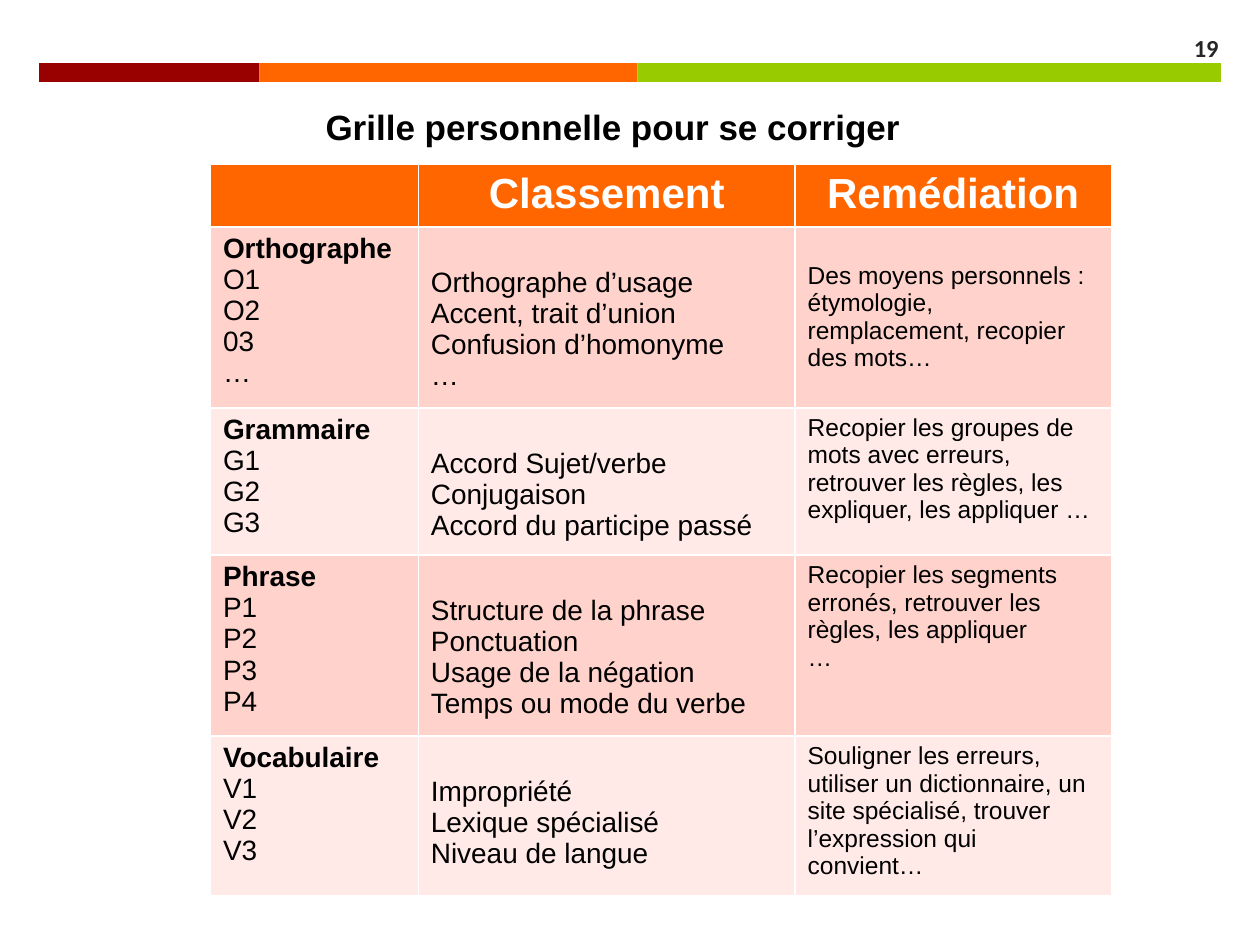
"""Build the slide with a personal grid for correcting one's own writing."""
from pptx import Presentation
from pptx.dml.color import RGBColor
from pptx.enum.shapes import MSO_SHAPE as Shape
from pptx.enum.text import MSO_ANCHOR as Anchor, PP_ALIGN as Align
from pptx.util import Inches, Pt

DARK_RED = RGBColor(0x99, 0x00, 0x00)
ORANGE = RGBColor(0xFF, 0x66, 0x00)
GREEN = RGBColor(0x99, 0xCC, 0x00)
PINK = RGBColor(0xFF, 0xD3, 0xCC)
PALE_PINK = RGBColor(0xFF, 0xEA, 0xE7)
WHITE = RGBColor(0xFF, 0xFF, 0xFF)
BLACK = RGBColor(0x00, 0x00, 0x00)
GREY = RGBColor(0x26, 0x26, 0x26)

BANDS = [(1.75, DARK_RED), (3, ORANGE), (4.63, GREEN)]
HEADERS = ["", "Classement", "Remédiation"]
COLUMN_WIDTHS = [1.65, 2.99, 2.51]
ROW_HEIGHTS = [0.49, 1.43, 1.17, 1.43, 1.26]
TOP_MARGIN = 0.05
CLASS_TOP = 0.32
GRID = [
    (["Orthographe", "O1", "O2", "03", "…"],
     ["Orthographe d’usage", "Accent, trait d’union", "Confusion d’homonyme", "…"],
     ["Des moyens personnels : étymologie, remplacement, recopier des mots…"], 0.28),
    (["Grammaire", "G1", "G2", "G3"],
     ["Accord Sujet/verbe", "Conjugaison", "Accord du participe passé"],
     ["Recopier les groupes de mots avec erreurs, retrouver les règles, "
      "les expliquer, les appliquer …"], TOP_MARGIN),
    (["Phrase", "P1", "P2", "P3", "P4"],
     ["Structure de la phrase", "Ponctuation", "Usage de la négation",
      "Temps ou mode du verbe"],
     ["Recopier les segments erronés, retrouver les règles, les appliquer", "…"],
     TOP_MARGIN),
    (["Vocabulaire", "V1", "V2", "V3"],
     ["Impropriété", "Lexique spécialisé", "Niveau de langue"],
     ["Souligner les erreurs, utiliser un dictionnaire, un site spécialisé, "
      "trouver l’expression qui convient…"], TOP_MARGIN),
]


def write(tf, lines, size, color=BLACK, bold=False, align=Align.LEFT, font="Arial"):
    """Fill a text frame with one paragraph per line."""
    tf.word_wrap = True
    for i, line in enumerate(lines):
        p = tf.add_paragraph() if i else tf.paragraphs[0]
        p.text = line
        p.alignment = align
        p.font.name = font
        p.font.size = Pt(size)
        p.font.bold = bold
        p.font.color.rgb = color


def add_bands(s):
    """Draw the coloured bands end to end across the top."""
    left = 0.31
    for width, color in BANDS:
        sp = s.shapes.add_shape(Shape.RECTANGLE, Inches(left), Inches(0.5),
                                Inches(width), Inches(0.15))
        sp.shadow.inherit = False
        sp.fill.solid()
        sp.fill.fore_color.rgb = color
        sp.line.fill.background()
        left += width


def add_text(s, left, top, width, height, text, size, anchor=Anchor.TOP, **style):
    """Add a bold one-line text box."""
    tf = s.shapes.add_textbox(Inches(left), Inches(top),
                              Inches(width), Inches(height)).text_frame
    tf.vertical_anchor = anchor
    write(tf, [text], size, bold=True, **style)


def fill_cell(cell, lines, size, fill, top=TOP_MARGIN, **style):
    """Set the fill, top margin and text of a table cell."""
    cell.fill.solid()
    cell.fill.fore_color.rgb = fill
    cell.margin_top = Inches(top)
    write(cell.text_frame, lines, size, **style)


def add_grid(s):
    """Add the correction table."""
    table = s.shapes.add_table(len(ROW_HEIGHTS), len(COLUMN_WIDTHS), Inches(1.67), Inches(1.3),
                               Inches(sum(COLUMN_WIDTHS)), Inches(sum(ROW_HEIGHTS))).table
    for column, width in zip(table.columns, COLUMN_WIDTHS):
        column.width = Inches(width)
    for row, height in zip(table.rows, ROW_HEIGHTS):
        row.height = Inches(height)
    for col, header in enumerate(HEADERS):
        fill_cell(table.cell(0, col), [header], 24, ORANGE,
                  color=WHITE, bold=True, align=Align.CENTER)
    for row, (codes, classes, remedies, remedy_top) in enumerate(GRID, 1):
        fill = PINK if row % 2 else PALE_PINK
        fill_cell(table.cell(row, 0), codes, 16, fill)
        table.cell(row, 0).text_frame.paragraphs[0].runs[0].font.bold = True
        fill_cell(table.cell(row, 1), classes, 16, fill, CLASS_TOP)
        fill_cell(table.cell(row, 2), remedies, 14, fill, remedy_top)


def main():
    """Create the presentation and save it."""
    prs = Presentation()
    prs.slide_width, prs.slide_height = Inches(10), Inches(7.5)
    s = prs.slides.add_slide(prs.slide_layouts[6])
    add_bands(s)
    add_text(s, 9.08, 0.18, 0.69, 0.39, "19", 14, Anchor.MIDDLE,
             color=GREY, align=Align.RIGHT, font="Calibri")
    add_text(s, 0.21, 0.79, 9.31, 0.45, "Grille personnelle pour se corriger", 20,
             align=Align.CENTER)
    add_grid(s)
    prs.save("out.pptx")


if __name__ == "__main__":
    main()
